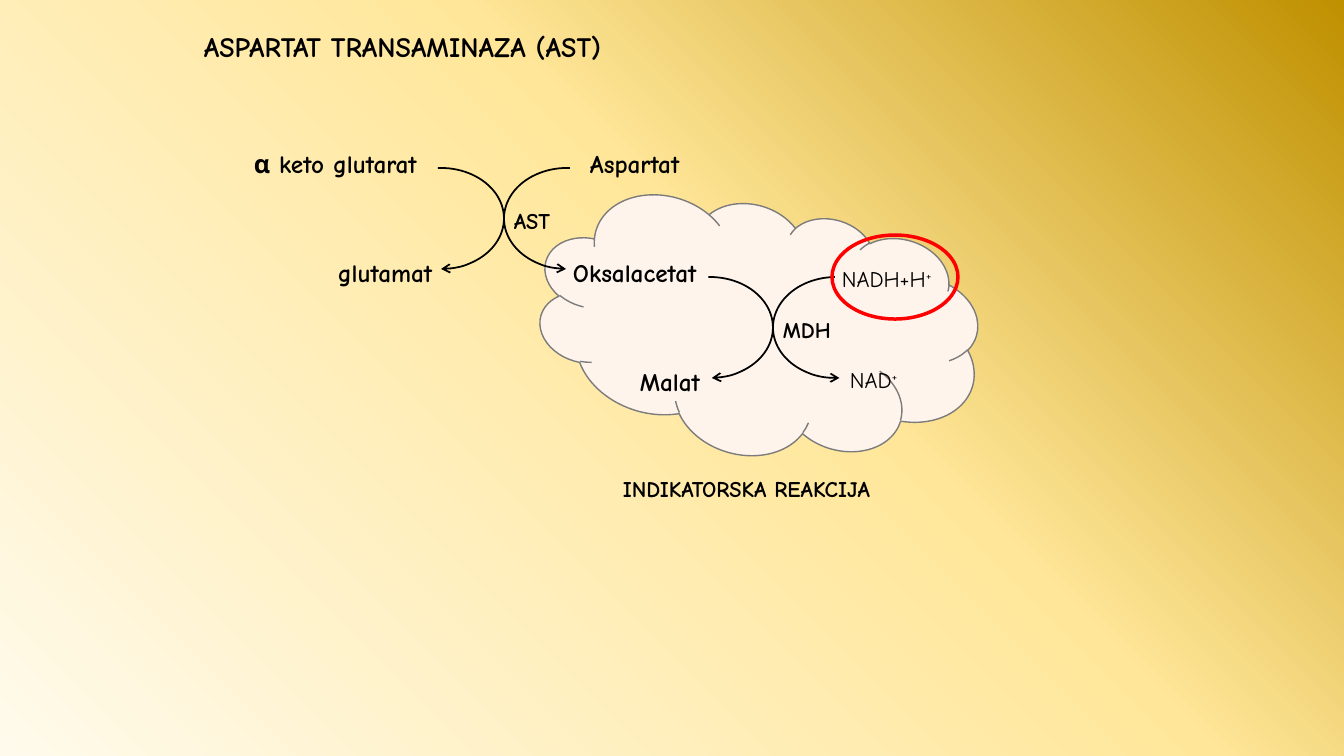
"""Build the aspartate transaminase reaction slide."""
from copy import deepcopy

from pptx import Presentation
from pptx.dml.color import RGBColor
from pptx.enum.shapes import MSO_SHAPE
from pptx.enum.text import MSO_AUTO_SIZE
from pptx.oxml.ns import qn
from pptx.oxml.xmlchemy import OxmlElement
from pptx.util import Emu, Pt

ARC, CLOUD, OVAL = MSO_SHAPE.ARC, MSO_SHAPE.CLOUD, MSO_SHAPE.OVAL
FIT_SHAPE = MSO_AUTO_SIZE.SHAPE_TO_FIT_TEXT

BLACK = RGBColor(0x00, 0x00, 0x00)
RED = RGBColor(0xFF, 0x00, 0x00)
GRAY = RGBColor(0x7C, 0x7C, 0x7C)
CREAM = RGBColor(0xFE, 0xF4, 0xEC)
BACKGROUND_STOPS = [
    (0, RGBColor(0xFF, 0xFA, 0xEB)),
    (0.58, RGBColor(0xFF, 0xE6, 0x99)),
    (1, RGBColor(0xBF, 0x90, 0x00)),
]

FONT = "Comic Neue"
EMU_PER_PX = 914400 / 100.8
SLIDE_SIZE = (1344, 756)
ARC_SIZE = (126, 101)
ADJUSTMENT_PER_DEGREE = 0.6

CLOUD_BOX = (536, 202, 444, 253)
CLOUD_ROTATION = 15.8
NADH_RING = (832, 235, 126, 84)

# (text, superscript, left, top, width, height, size, bold, wrap)
LABELS = [
    ("ASPARTAT TRANSAMINAZA (AST)", "", 194, 25, 613, 44, 20, True, True),
    ("α keto glutarat", "", 244, 143, 207, 40, 18, True, False),
    ("Aspartat", "", 580, 143, 128, 40, 18, True, False),
    ("glutamat", "", 328, 252, 125, 40, 18, True, False),
    ("Oksalacetat", "", 563, 252, 166, 40, 18, True, False),
    ("Malat", "", 630, 361, 90, 40, 18, True, False),
    ("AST", "", 504, 202, 69, 37, 16, True, False),
    ("MDH", "", 773, 311, 74, 37, 16, True, False),
    ("INDIKATORSKA REAKCIJA", "", 613, 470, 332, 37, 16, True, False),
    ("NADH+H", "+", 832, 260, 128, 37, 16, False, False),
    ("NAD", "+", 840, 361, 79, 37, 16, False, False),
]

# (meeting point of the two arcs, top, left arc degrees, right arc degrees)
REACTIONS = [
    (504, 168, (266.5, 89.9), (91.1, 273.3)),
    (773, 277, (268.3, 87.9), (86.1, 268.8)),
]


def px(*lengths):
    return [Emu(round(length * EMU_PER_PX)) for length in lengths]


def paint_background(slide):
    fill = slide.background.fill
    fill.gradient()
    fill.gradient_angle = 45
    stop_list = next(slide.element.iter(qn("a:gsLst")))
    stop_list.append(deepcopy(stop_list[0]))
    for stop, (position, color) in zip(fill.gradient_stops, BACKGROUND_STOPS):
        stop.position = position
        stop.color.rgb = color


def add_outline(slide, preset, box, color, width):
    shape = slide.shapes.add_shape(preset, *px(*box))
    shape.shadow.inherit = False
    shape.fill.background()
    shape.line.color.rgb = color
    shape.line.width = Pt(width)
    return shape


def add_arc(slide, left, top, degrees, arrow_end):
    arc = add_outline(slide, ARC, (left, top, *ARC_SIZE), BLACK, 1.25)
    for index, angle in enumerate(degrees):
        arc.adjustments[index] = angle * ADJUSTMENT_PER_DEGREE
    arrowhead = OxmlElement(arrow_end)
    arrowhead.set("type", "arrow")
    arc.line._get_or_add_ln().append(arrowhead)


def add_label(slide, text, superscript, left, top, width, height, size, bold, wrap):
    box = slide.shapes.add_textbox(*px(left, top, width, height))
    frame = box.text_frame
    frame.word_wrap = wrap
    frame.auto_size = FIT_SHAPE
    paragraph = frame.paragraphs[0]
    for part in filter(None, (text, superscript)):
        run = paragraph.add_run()
        run.text = part
        run.font.name = FONT
        run.font.size = Pt(size)
        run.font.bold = bold
        run.font.color.rgb = BLACK
    if superscript:
        run.font._element.set("baseline", "30000")


def main():
    presentation = Presentation()
    presentation.slide_width, presentation.slide_height = px(*SLIDE_SIZE)
    slide = presentation.slides.add_slide(presentation.slide_layouts[6])
    paint_background(slide)

    cloud = add_outline(slide, CLOUD, CLOUD_BOX, GRAY, 1)
    cloud.rotation = CLOUD_ROTATION
    cloud.fill.solid()
    cloud.fill.fore_color.rgb = CREAM

    for label in LABELS:
        add_label(slide, *label)
    for center, top, left_degrees, right_degrees in REACTIONS:
        add_arc(slide, center - ARC_SIZE[0], top, left_degrees, "a:tailEnd")
        add_arc(slide, center, top, right_degrees, "a:headEnd")
    add_outline(slide, OVAL, NADH_RING, RED, 2.5)

    presentation.save("out.pptx")


if __name__ == "__main__":
    main()
